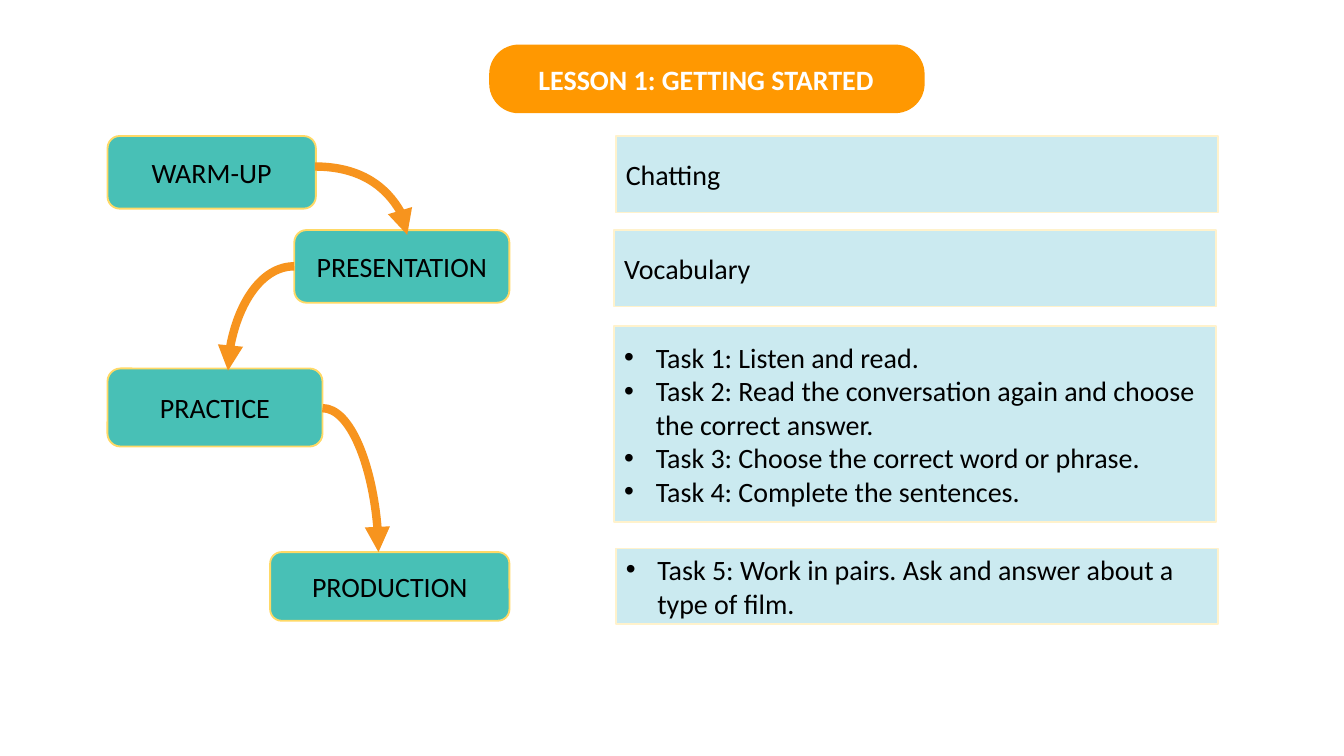
from lxml import etree
from pptx import Presentation
from pptx.dml.color import RGBColor
from pptx.enum import shapes, text
from pptx.oxml import ns
from pptx.util import Pt

# Content: lengths in points, boxes as left, top, width, height
TITLE = "LESSON 1: GETTING STARTED"
STAGES = [
    ("WARM-UP", (57.6, 72.9, 111.6, 38.9)),
    ("PRESENTATION", (157.7, 123.3, 115.2, 38.9)),
    ("PRACTICE", (57.6, 197.4, 115.2, 41.8)),
    ("PRODUCTION", (144.7, 295.8, 128.2, 36.8)),
]
ACTIVITIES = [
    (["Chatting"], False, (329.8, 72.9, 322.6, 41)),
    (["Vocabulary"], False, (329, 123.3, 322.6, 41)),
    (["Task 1: Listen and read.",
      "Task 2: Read the conversation again and choose the correct answer.",
      "Task 3: Choose the correct word or phrase.",
      "Task 4: Complete the sentences."], True, (329, 174.7, 322.6, 105)),
    (["Task 5: Work in pairs. Ask and answer about a type of film."],
     True, (329.8, 293.8, 322.6, 40.4)),
]
ARROWS = [
    ((168.7, 89.2), (218.2, 125.8)),
    ((157.7, 142.7), (122.2, 198.6)),
    ((172.8, 218.7), (202.8, 295.8)),
]
ORANGE, TEAL, GOLD, PALE_BLUE, CREAM = "FF9801", "48C0B6", "FFD966", "CBEAF0", "FFF2CC"
ARROW_ORANGE, BLACK, WHITE = "F7941E", "000000", "FFFFFF"
INDENT = 16.9


def color(value):
    return RGBColor.from_string(value)


def add_box(kind, place, fill, line=None):
    box = page.shapes.add_shape(kind, *map(Pt, place))
    box.shadow.inherit = False
    box.fill.solid()
    box.fill.fore_color.rgb = color(fill)
    if line:
        box.line.color.rgb = color(line)
        box.line.width = Pt(1)
    else:
        box.line.fill.background()
    return box


def add_bullet(para):
    props = para._p.get_or_add_pPr()
    props.set("marL", str(Pt(INDENT)))
    props.set("indent", str(-Pt(INDENT)))
    font = etree.SubElement(props, ns.qn("a:buFont"))
    font.set("typeface", "Arial")
    etree.SubElement(props, ns.qn("a:buChar")).set("char", "•")


def write(box, lines, font_color=BLACK, bold=False, bulleted=False,
          align=text.PP_ALIGN.LEFT, anchor=text.MSO_ANCHOR.MIDDLE):
    frame = box.text_frame
    frame.word_wrap = True
    frame.vertical_anchor = anchor
    frame.margin_left = frame.margin_right = Pt(5.4)
    frame.margin_top = frame.margin_bottom = Pt(2.7)
    frame.text = "\n".join(lines)
    for para in frame.paragraphs:
        para.alignment = align
        if bulleted:
            add_bullet(para)
        para.font.name = "Calibri"
        para.font.size = Pt(15)
        para.font.bold = bold
        para.font.color.rgb = color(font_color)


def add_arrow(start, end):
    arrow = page.shapes.add_connector(
        shapes.MSO_CONNECTOR.CURVE, *map(Pt, start + end))
    arrow.line.color.rgb = color(ARROW_ORANGE)
    arrow.line.width = Pt(4.5)
    props = arrow._element.spPr
    # Quarter-turn curve: leaves sideways, arrives from above
    props.find(ns.qn("a:prstGeom")).set("prst", "curvedConnector2")
    tip = etree.SubElement(props.find(ns.qn("a:ln")), ns.qn("a:tailEnd"))
    tip.set("type", "triangle")
    etree.SubElement(props, ns.qn("a:effectLst"))


deck = Presentation()
deck.slide_width, deck.slide_height = Pt(720), Pt(405)
page = deck.slides.add_slide(deck.slide_layouts[6])

# Title
pill = add_box(shapes.MSO_SHAPE.ROUNDED_RECTANGLE, (262.1, 23.9, 233.3, 36.8), ORANGE)
pill.adjustments[0] = 0.43
title = page.shapes.add_textbox(*map(Pt, (283, 31, 212.4, 23.8)))
write(title, [TITLE], WHITE, bold=True, anchor=text.MSO_ANCHOR.TOP)

# Lesson stages
for name, place in STAGES:
    stage = add_box(shapes.MSO_SHAPE.ROUNDED_RECTANGLE, place, TEAL, GOLD)
    write(stage, [name], align=text.PP_ALIGN.CENTER)

# Activities for each stage
for lines, bulleted, place in ACTIVITIES:
    panel = add_box(shapes.MSO_SHAPE.RECTANGLE, place, PALE_BLUE, CREAM)
    write(panel, lines, bulleted=bulleted)

# Arrows from stage to stage
for start, end in ARROWS:
    add_arrow(start, end)

deck.save("out.pptx")
